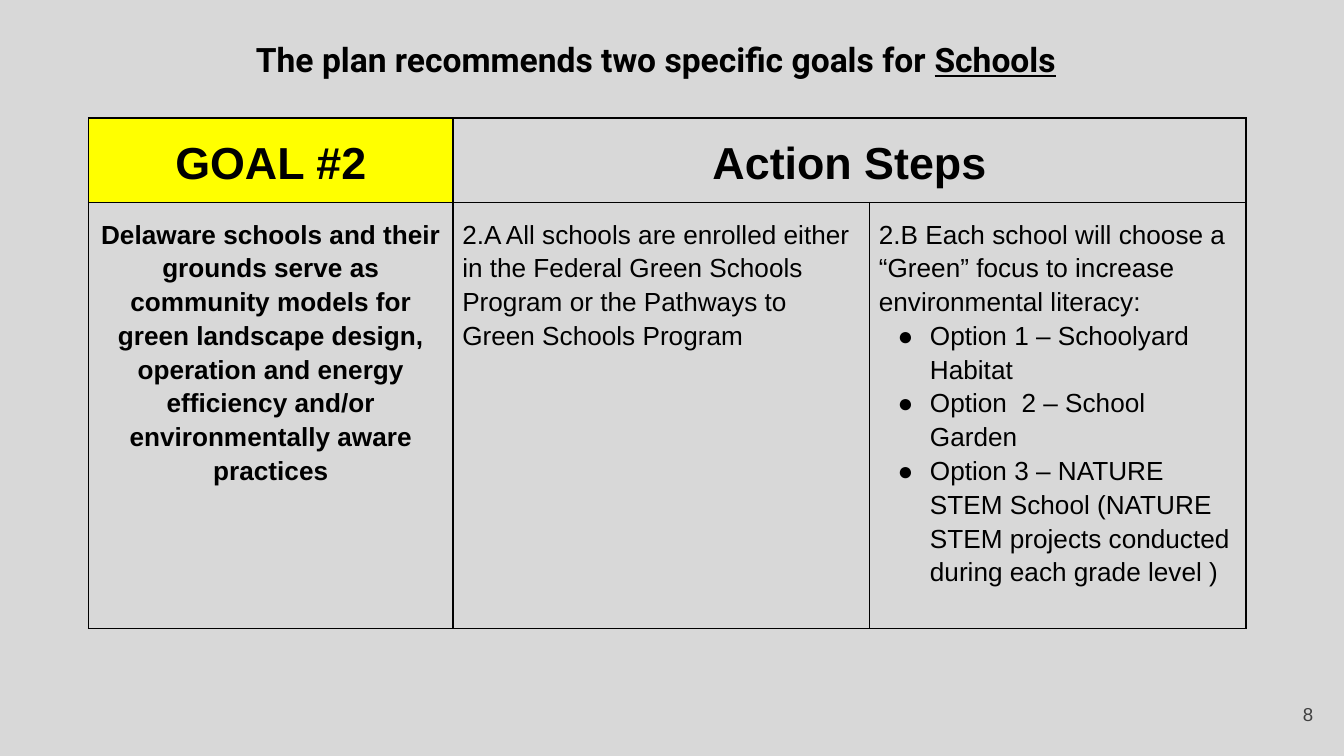
"""Build the slide on the second goal for schools and its action steps."""
from dataclasses import dataclass
from typing import Any

from lxml import etree
from pptx import Presentation
from pptx import util as u
from pptx.dml.color import RGBColor
from pptx.enum import text as t
from pptx.oxml.ns import qn

BLACK, GREY, YELLOW, NUMBER_GREY = "000000", "D8D8D8", "FFFF00", "404040"
SLIDE_WIDTH = 10
SLIDE_HEIGHT = SLIDE_WIDTH * 9 / 16
COLUMN_WIDTHS = (2.71, 3.1, 2.8)
ROW_HEIGHTS = (0.62, 3.17)


@dataclass
class Entry:
    row: int
    column: int
    lines: tuple[str, ...]
    size: int = 14
    bold: bool = False
    align: Any = t.PP_ALIGN.LEFT
    anchor: Any = t.MSO_ANCHOR.TOP
    fill: str | None = None


CENTER, MIDDLE = t.PP_ALIGN.CENTER, t.MSO_ANCHOR.MIDDLE
ENTRIES = (
    Entry(0, 0, ("GOAL #2",), 24, True, CENTER, MIDDLE, YELLOW),
    Entry(0, 1, ("Action Steps",), 24, True, CENTER, MIDDLE),
    Entry(1, 0, ("Delaware schools and their grounds serve as community models for "
                 "green landscape design, operation and energy efficiency and/or "
                 "environmentally aware practices",), bold=True, align=CENTER),
    Entry(1, 1, ("2.A All schools are enrolled either in the Federal Green Schools "
                 "Program or the Pathways to Green Schools Program",)),
    Entry(1, 2, ("2.B Each school will choose a “Green” focus to increase "
                 "environmental literacy:",
                 "Option 1 – Schoolyard Habitat",
                 "Option  2 – School Garden",
                 "Option 3 – NATURE STEM School (NATURE STEM projects conducted "
                 "during each grade level )")),
)


def paint(color_format: Any, color: str) -> None:
    color_format.rgb = RGBColor.from_string(color)


def apply(target: Any, values: dict[str, Any]) -> None:
    for name, value in values.items():
        setattr(target, name, value)


def add_run(paragraph: Any, words: str, color: str = BLACK, **font: Any) -> None:
    run = paragraph.add_run()
    run.text = words
    apply(run.font, font)
    paint(run.font.color, color)


def set_frame(frame: Any, anchor: Any) -> None:
    margins = dict.fromkeys(
        ("margin_left", "margin_right", "margin_top", "margin_bottom"), u.Inches(0.1))
    apply(frame, {"word_wrap": True, "auto_size": t.MSO_AUTO_SIZE.NONE,
                  "vertical_anchor": anchor, **margins})


def add_bullet(paragraph: Any) -> None:
    properties = paragraph._p.get_or_add_pPr()
    properties.set("marL", str(u.Inches(0.38)))
    properties.set("indent", str(u.Inches(-0.24)))
    bullet_color = etree.SubElement(properties, qn("a:buClr"))
    etree.SubElement(bullet_color, qn("a:srgbClr"), val=BLACK)
    etree.SubElement(properties, qn("a:buFont"), typeface="Arial")
    etree.SubElement(properties, qn("a:buChar"), char="●")


def add_borders(cell: Any) -> None:
    properties = cell._tc.get_or_add_tcPr()
    for side in ("lnL", "lnR", "lnT", "lnB"):
        border = etree.SubElement(properties, qn(f"a:{side}"), w=str(u.Pt(1)))
        solid = etree.SubElement(border, qn("a:solidFill"))
        etree.SubElement(solid, qn("a:srgbClr"), val=BLACK)


def fill_entry(cell: Any, entry: Entry) -> None:
    apply(cell, {"vertical_anchor": entry.anchor,
                 "margin_left": u.Inches(0.07), "margin_right": u.Inches(0.07),
                 "margin_top": u.Inches(0.1), "margin_bottom": u.Inches(0.1)})
    if entry.fill:
        cell.fill.solid()
        paint(cell.fill.fore_color, entry.fill)
    for index, line in enumerate(entry.lines):
        frame = cell.text_frame
        paragraph = frame.add_paragraph() if index else frame.paragraphs[0]
        apply(paragraph, {"alignment": entry.align, "line_spacing": 1.15})
        add_run(paragraph, line, name="Arial", size=u.Pt(entry.size), bold=entry.bold)
        if index:
            add_bullet(paragraph)


def add_goal_table(slide: Any) -> None:
    goals = slide.shapes.add_table(
        len(ROW_HEIGHTS), len(COLUMN_WIDTHS), u.Inches(0.66), u.Inches(0.88),
        u.Inches(sum(COLUMN_WIDTHS)), u.Inches(sum(ROW_HEIGHTS))).table
    apply(goals, {"first_row": False, "horz_banding": False})
    for column, width in zip(goals.columns, COLUMN_WIDTHS):
        column.width = u.Inches(width)
    for row, height in zip(goals.rows, ROW_HEIGHTS):
        row.height = u.Inches(height)
    for cell in goals.iter_cells():
        add_borders(cell)
        cell.fill.background()
    goals.cell(0, 1).merge(goals.cell(0, 2))
    for entry in ENTRIES:
        fill_entry(goals.cell(entry.row, entry.column), entry)


def add_heading(slide: Any) -> None:
    heading = slide.shapes.title
    apply(heading, {"left": u.Inches(-0.07), "top": u.Inches(0.19),
                    "width": u.Inches(9.9), "height": u.Inches(0.5)})
    set_frame(heading.text_frame, t.MSO_ANCHOR.TOP)
    paragraph = heading.text_frame.paragraphs[0]
    paragraph.alignment = CENTER
    font = {"name": "Roboto", "size": u.Pt(18), "bold": True}
    add_run(paragraph, "The plan recommends two specific goals for ", **font)
    add_run(paragraph, "Schools", underline=True, **font)


def add_page_number(slide: Any) -> None:
    page_number = slide.shapes.add_textbox(
        u.Inches(9.27), u.Inches(5.1), u.Inches(0.6), u.Inches(0.43))
    set_frame(page_number.text_frame, MIDDLE)
    paragraph = page_number.text_frame.paragraphs[0]
    paragraph.alignment = t.PP_ALIGN.RIGHT
    add_run(paragraph, "8", NUMBER_GREY, name="Arial", size=u.Pt(10))


def main() -> None:
    deck = Presentation()
    apply(deck, {"slide_width": u.Inches(SLIDE_WIDTH),
                 "slide_height": u.Inches(SLIDE_HEIGHT)})
    slide = deck.slides.add_slide(deck.slide_layouts[5])
    slide.background.fill.solid()
    paint(slide.background.fill.fore_color, GREY)
    add_goal_table(slide)
    add_heading(slide)
    add_page_number(slide)
    deck.save("out.pptx")


if __name__ == "__main__":
    main()
